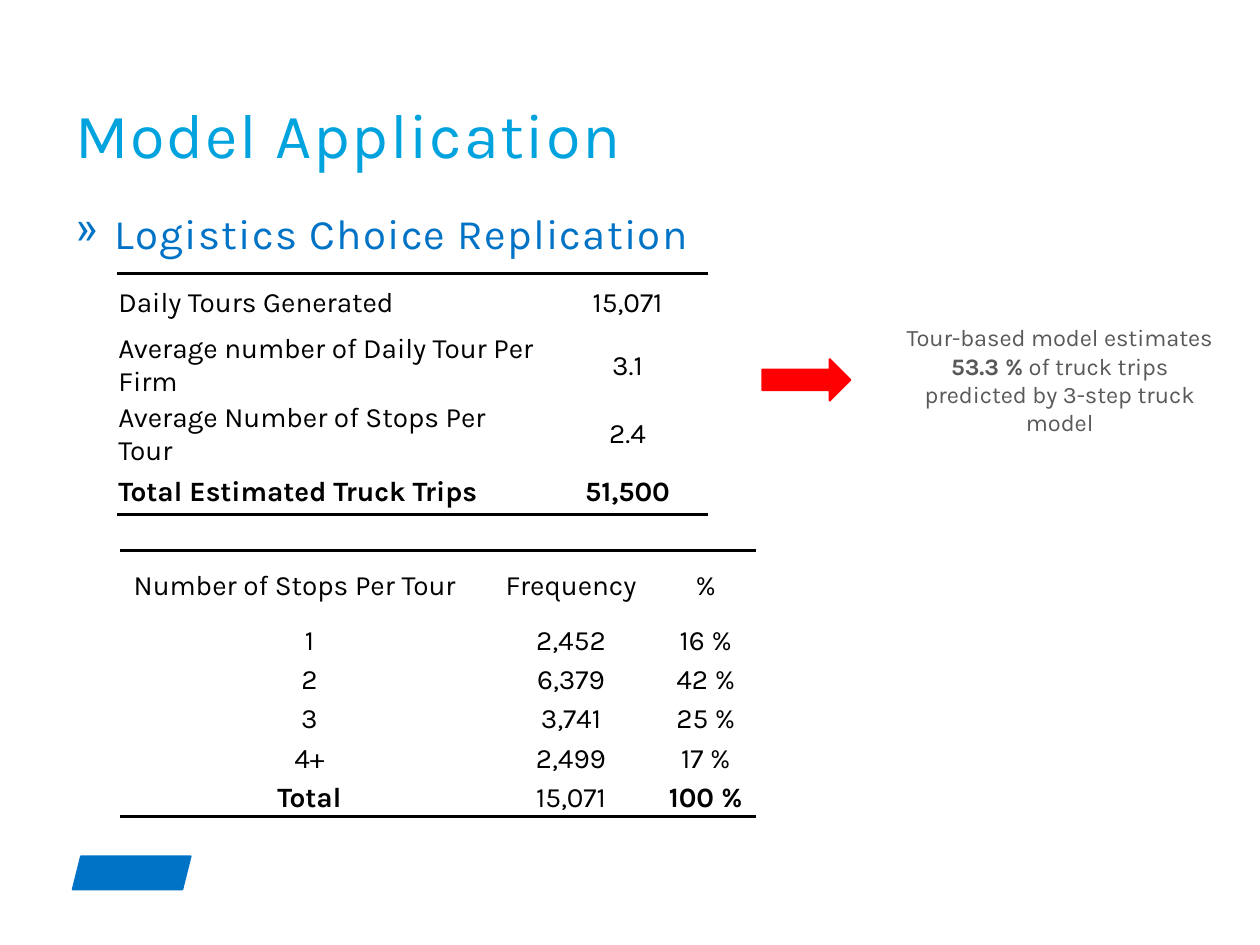
"""Build the Model Application slide with its two result tables."""
from dataclasses import dataclass

from lxml.etree import SubElement
from pptx import Presentation
from pptx.dml.color import RGBColor
from pptx.enum.shapes import MSO_SHAPE
from pptx.enum.text import MSO_ANCHOR, PP_ALIGN
from pptx.oxml.ns import qn
from pptx.util import Pt

FONT = "Karla"
BLUE, RED, BLACK, WHITE = "0073C6", "FF0000", "000000", "FFFFFF"


@dataclass
class Area:
    left: float
    top: float
    width: float
    height: float

    def lengths(self) -> tuple:
        return Pt(self.left), Pt(self.top), Pt(self.width), Pt(self.height)


@dataclass
class Grid:
    area: Area
    columns: list[float]
    heights: list[float]
    rows: list[list[str]]
    bold: set[tuple[int, int]]
    left_cells: set[tuple[int, int]]
    first_inset: float


def color(value: str) -> RGBColor:
    return RGBColor.from_string(value)


def add_text(para, text: str, *, size: float, ink: str, bold: bool = False,
             spacing: float = 0) -> None:
    span = para.add_run()
    span.text = text
    span.font.name = FONT
    span.font.size = Pt(size)
    span.font.bold = bold
    span.font.color.rgb = color(ink)
    if spacing:
        span.font._element.set("spc", str(round(spacing * 100)))


def add_box(page, area: Area, anchor: MSO_ANCHOR):
    frame = page.shapes.add_textbox(*area.lengths()).text_frame
    frame.word_wrap = True
    frame.vertical_anchor = anchor
    return frame.paragraphs[0]


def add_bullet(para, mark: str, indent: float) -> None:
    properties = para._p.get_or_add_pPr()
    properties.set("marL", str(Pt(indent)))
    properties.set("indent", str(-Pt(indent)))
    SubElement(properties, qn("a:buChar")).set("char", mark)


def set_borders(cell, ruled: set[str]) -> None:
    properties = cell._tc.get_or_add_tcPr()
    for position, side in enumerate(("lnL", "lnR", "lnT", "lnB")):
        line = SubElement(properties, qn(f"a:{side}"))
        properties.insert(position, line)
        if side in ruled:
            line.set("w", str(Pt(2)))
            fill = SubElement(line, qn("a:solidFill"))
            SubElement(fill, qn("a:srgbClr")).set("val", BLACK)
        else:
            SubElement(line, qn("a:noFill"))


def add_grid(page, grid: Grid) -> None:
    row_count, column_count = len(grid.rows), len(grid.columns)
    table = page.shapes.add_table(row_count, column_count, *grid.area.lengths()).table
    table.first_row = table.horz_banding = False
    for column, width in zip(table.columns, grid.columns):
        column.width = Pt(width)
    for row, height in zip(table.rows, grid.heights):
        row.height = Pt(height)
    for i, texts in enumerate(grid.rows):
        ruled = {side for side, edge in (("lnT", 0), ("lnB", row_count - 1)) if i == edge}
        for j, text in enumerate(texts):
            cell = table.cell(i, j)
            cell.margin_left = Pt(0.7 if j else grid.first_inset)
            cell.margin_right = cell.margin_top = Pt(0.7)
            cell.margin_bottom = Pt(0)
            cell.vertical_anchor = MSO_ANCHOR.MIDDLE
            cell.fill.solid()
            cell.fill.fore_color.rgb = color(WHITE)
            para = cell.text_frame.paragraphs[0]
            para.alignment = PP_ALIGN.LEFT if (i, j) in grid.left_cells else PP_ALIGN.CENTER
            add_text(para, text, size=16, ink=BLACK, bold=(i, j) in grid.bold)
            set_borders(cell, ruled)


def add_block(page, kind: MSO_SHAPE, area: Area, fill: str) -> None:
    shape = page.shapes.add_shape(kind, *area.lengths())
    shape.shadow.inherit = False
    shape.fill.solid()
    shape.fill.fore_color.rgb = color(fill)
    shape.line.color.rgb = color(fill)
    shape.line.width = Pt(1)


TOUR_SUMMARY = Grid(
    Area(67, 156.2, 337.7, 130.3), [245.5, 92.2], [33.1, 38.2, 32.4, 26.6],
    [["Daily Tours Generated", "15,071"],
     ["Average number of Daily Tour Per Firm", "3.1"],
     ["Average Number of Stops Per Tour", "2.4"],
     ["Total Estimated Truck Trips", "51,500"]],
    bold={(3, 0), (3, 1)}, left_cells={(i, 0) for i in range(4)}, first_inset=0.7)

STOP_FREQUENCY = Grid(
    Area(68.4, 314.6, 363.6, 152.6), [209.5, 96.8, 57.3], [40.3] + [22.4] * 5,
    [["Number of Stops Per Tour", "Frequency", "%"],
     ["1", "2,452", "16 %"],
     ["2", "6,379", "42 %"],
     ["3", "3,741", "25 %"],
     ["4+", "2,499", "17 %"],
     ["Total", "15,071", "100 %"]],
    bold={(5, 0), (5, 2)}, left_cells={(0, 0)}, first_inset=8)


def main() -> None:
    deck = Presentation()
    deck.slide_width, deck.slide_height = Pt(720), Pt(540)
    page = deck.slides.add_slide(deck.slide_layouts[6])

    add_block(page, MSO_SHAPE.PARALLELOGRAM, Area(41.5, 489.3, 67.5, 19), BLUE)

    title = add_box(page, Area(36, 28.8, 648, 73.4), MSO_ANCHOR.BOTTOM)
    title.line_spacing = 0.9
    add_text(title, "Model Application", size=36, ink="00A3DD", spacing=1)

    heading = add_box(page, Area(36, 119.5, 648, 358.6), MSO_ANCHOR.TOP)
    heading.line_spacing = 0.85
    heading.space_after = Pt(7.2)
    add_bullet(heading, "»", 22.5)
    add_text(heading, "Logistics Choice Replication", size=24, ink=BLUE, spacing=0.7)

    for grid in (TOUR_SUMMARY, STOP_FREQUENCY):
        add_grid(page, grid)

    finding = add_box(page, Area(506.2, 163.4, 198.7, 107.3), MSO_ANCHOR.MIDDLE)
    finding.alignment = PP_ALIGN.CENTER
    for text, bold in (("Tour-based model estimates ", False), ("53.3 %", True),
                       (" of truck trips predicted by 3-step truck model", False)):
        add_text(finding, text, size=13.5, ink="595959", bold=bold)

    add_block(page, MSO_SHAPE.RIGHT_ARROW, Area(435.6, 205.2, 50.4, 23.8), RED)
    deck.save("out.pptx")


if __name__ == "__main__":
    main()
